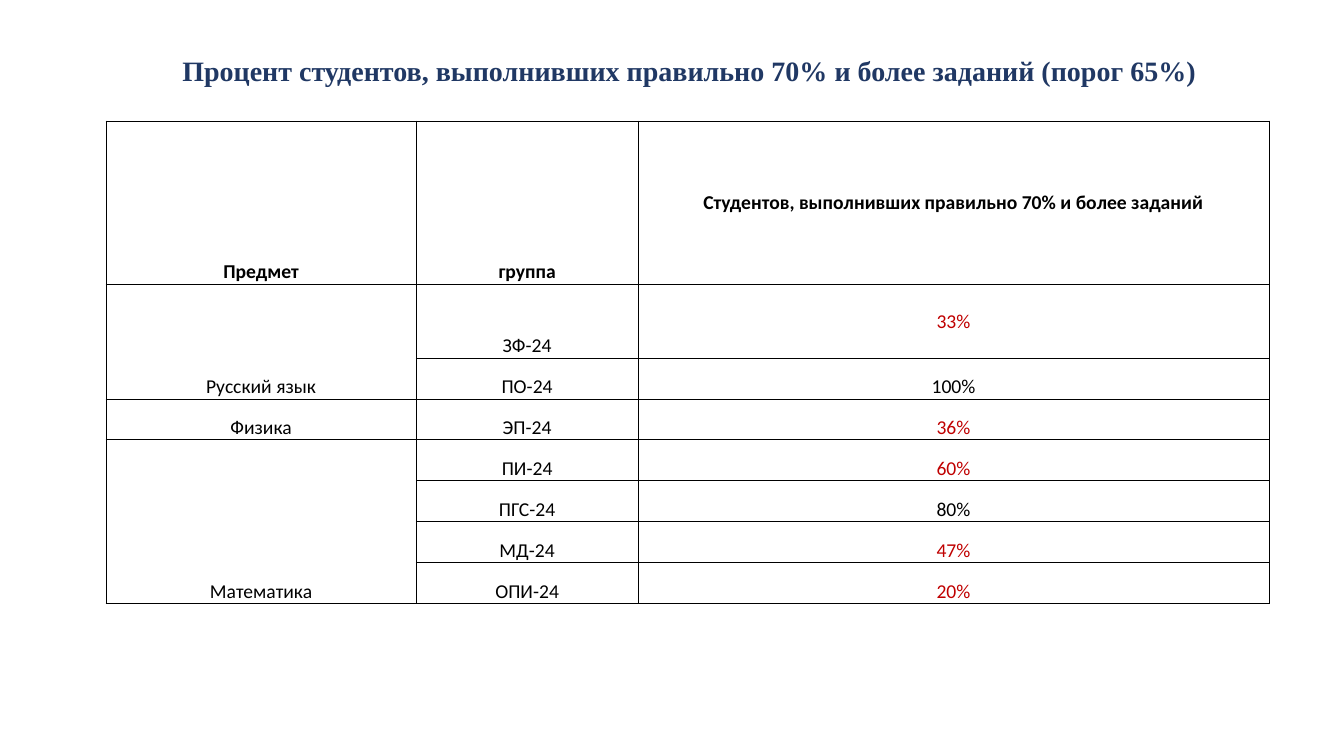
import pptx
import pptx.dml.color
import pptx.enum.text
import pptx.oxml
import pptx.oxml.ns
import pptx.util

Cm = pptx.util.Cm
Anchor = pptx.enum.text.MSO_ANCHOR
THRESHOLD = 65
HEADINGS = ["Предмет", "группа", "Студентов, выполнивших правильно 70% и более заданий"]
SUBJECTS = {
    "Русский язык": {"ЗФ-24": 33, "ПО-24": 100},
    "Физика": {"ЭП-24": 36},
    "Математика": {"ПИ-24": 60, "ПГС-24": 80, "МД-24": 47, "ОПИ-24": 20},
}
COLUMN_WIDTHS = [7.82, 5.59, 15.9]
ROW_HEIGHTS = [4.11, 1.86] + [1.03] * 6


def color(value):
    """Turn a hex string into a colour."""
    return pptx.dml.color.RGBColor.from_string(value)


def set_attributes(target, values):
    """Set every attribute listed in a dict."""
    for name, value in values.items():
        setattr(target, name, value)


def write_text(text_frame, text, hex_color, font_values):
    """Write one centred line of text."""
    paragraph = text_frame.paragraphs[0]
    paragraph.alignment = pptx.enum.text.PP_ALIGN.CENTER
    run = paragraph.add_run()
    run.text = text
    set_attributes(run.font, font_values)
    run.font.color.rgb = color(hex_color)
    return paragraph


def add_borders(cell, hex_color="000000", width=pptx.util.Pt(0.5)):
    """Draw a solid line on each side of a cell."""
    properties = cell._tc.get_or_add_tcPr()
    for side in ("lnL", "lnR", "lnT", "lnB"):
        properties.append(pptx.oxml.parse_xml(
            f'<a:{side} {pptx.oxml.ns.nsdecls("a")} w="{int(width)}"><a:solidFill>'
            f'<a:srgbClr val="{hex_color}"/></a:solidFill></a:{side}>'))


def fill_cell(cell, text, hex_color="000000", bold=False, anchor=Anchor.BOTTOM):
    """Write the text of one table cell."""
    set_attributes(cell, {"vertical_anchor": anchor})
    write_text(cell.text_frame, text, hex_color,
               {"name": "Calibri", "size": pptx.util.Pt(14), "bold": bold})


def add_title(slide, left, top, width, height):
    """Place the slide title at the bottom of its box."""
    text_frame = slide.shapes.add_textbox(left, top, width, height).text_frame
    set_attributes(text_frame, {"word_wrap": True, "vertical_anchor": Anchor.BOTTOM,
                                "margin_bottom": Cm(0.25)})
    paragraph = write_text(
        text_frame, "Процент студентов, выполнивших правильно 70% и более заданий (порог 65%)",
        "203864", {"name": "Times New Roman", "size": pptx.util.Pt(20), "bold": True})
    paragraph.line_spacing = 0.9


def add_results(slide, left, top):
    """Place the table of results by subject and group."""
    table = slide.shapes.add_table(
        len(ROW_HEIGHTS), len(COLUMN_WIDTHS), left, top,
        Cm(sum(COLUMN_WIDTHS)), Cm(sum(ROW_HEIGHTS))).table
    set_attributes(table, {"first_row": False, "horz_banding": False})
    for column, width in zip(table.columns, COLUMN_WIDTHS):
        column.width = Cm(width)
    for row, height in zip(table.rows, ROW_HEIGHTS):
        row.height = Cm(height)
    for cell in table.iter_cells():
        set_attributes(cell, {"margin_left": Cm(0.03), "margin_right": Cm(0.03),
                              "margin_top": Cm(0.03), "margin_bottom": 0})
        add_borders(cell)
        cell.fill.background()

    for index, heading in enumerate(HEADINGS):
        anchor = Anchor.MIDDLE if index == 2 else Anchor.BOTTOM
        fill_cell(table.cell(0, index), heading, bold=True, anchor=anchor)
    row = 1
    for subject, groups in SUBJECTS.items():
        if len(groups) > 1:
            table.cell(row, 0).merge(table.cell(row + len(groups) - 1, 0))
        fill_cell(table.cell(row, 0), subject)
        for group, percent in groups.items():
            fill_cell(table.cell(row, 1), group)
            fill_cell(table.cell(row, 2), f"{percent}%",
                      "C00000" if percent < THRESHOLD else "000000",
                      anchor=Anchor.MIDDLE if row == 1 else Anchor.BOTTOM)
            row += 1


def main():
    """Build and save the presentation."""
    presentation = pptx.Presentation()
    set_attributes(presentation, {"slide_width": Cm(33.87), "slide_height": Cm(19.05)})
    slide = presentation.slides.add_slide(presentation.slide_layouts[6])
    add_title(slide, Cm(2.77), Cm(0.56), Cm(29.21), Cm(1.9))
    add_results(slide, Cm(2.67), Cm(3.05))
    presentation.save("out.pptx")


if __name__ == "__main__":
    main()
